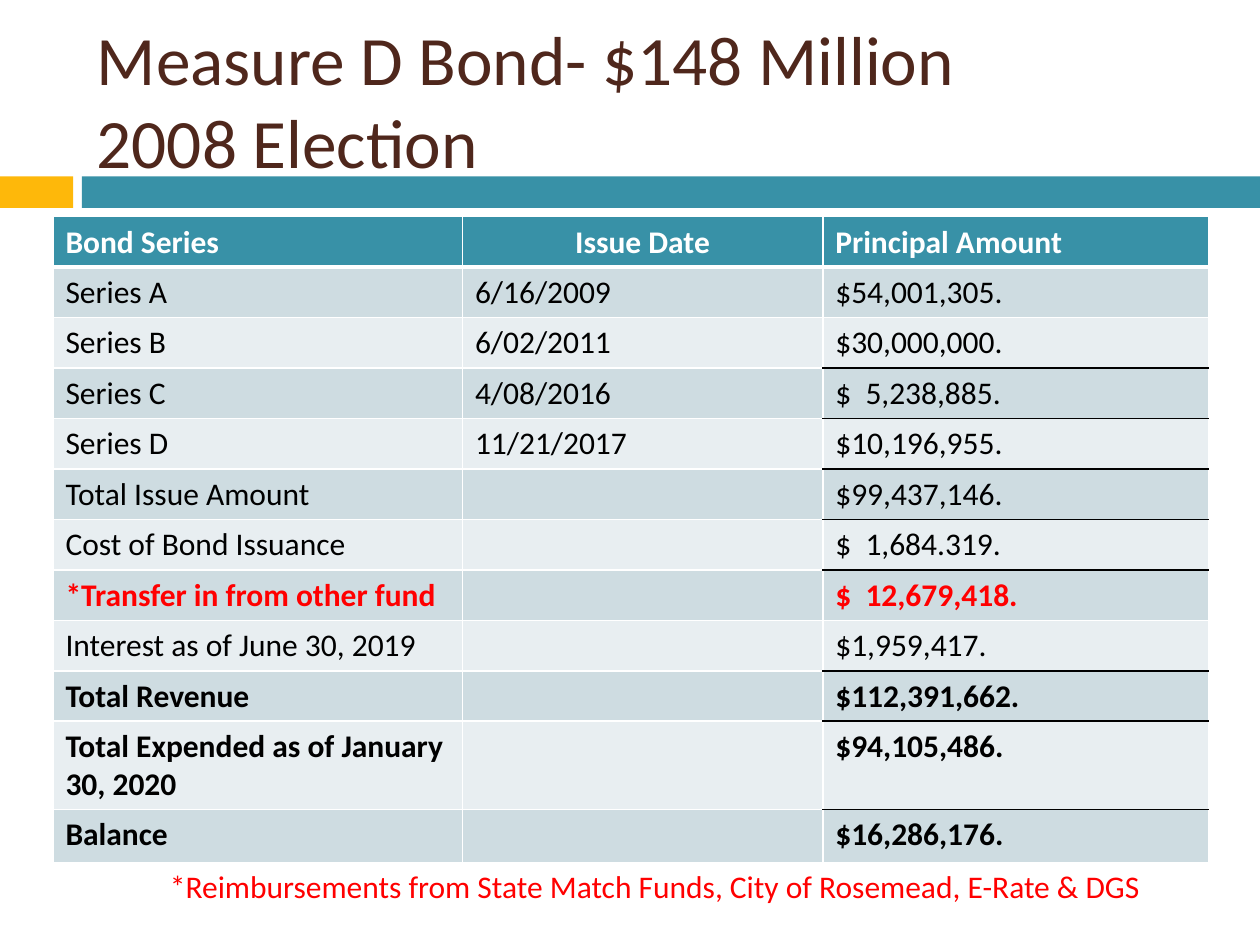
import pptx
import pptx.dml.color
import pptx.enum.shapes
import pptx.enum.text
import pptx.oxml
import pptx.oxml.ns
import pptx.util

Inches = pptx.util.Inches
Align = pptx.enum.text.PP_ALIGN
HUES = {
    "gold": "FEB80A", "teal": "3891A7", "brown": "4F271C", "dark": "CEDCE1",
    "pale": "E8EEF1", "red": "FF0000", "black": "000000", "white": "FFFFFF",
}
ROWS = [
    ("Bond Series", "Issue Date", "Principal Amount"),
    ("Series A", "6/16/2009", "$54,001,305."),
    ("Series B", "6/02/2011", "$30,000,000."),
    ("Series C", "4/08/2016", "$  5,238,885."),
    ("Series D", "11/21/2017", "$10,196,955."),
    ("Total Issue Amount", "", "$99,437,146."),
    ("Cost of Bond Issuance", "", "$  1,684.319."),
    ("*Transfer in from other fund", "", "$  12,679,418."),
    ("Interest as of June 30, 2019", "", "$1,959,417."),
    ("Total Revenue", "", "$112,391,662."),
    ("Total Expended as of January 30, 2020", "", "$94,105,486."),
    ("Balance", "", "$16,286,176."),
]
WIDTHS = [3.25, 2.86, 3.06]
HEIGHTS = [0.38] * 10 + [0.45, 0.42]
HEAD, MOVED = 0, 7
BOLD = {HEAD, MOVED, 9, 10, 11}
RULED = {2, 3, 4, 5, 6, 8, 9, 10}


class Deck:
    """Hold the style and the current slide, and draw each kind of element."""

    def __init__(self):
        self.show = pptx.Presentation()
        self.show.slide_width, self.show.slide_height = Inches(10), Inches(7.5)
        self.slide = self.show.slides.add_slide(self.show.slide_layouts[6])
        self.font = {"name": "Calibri", "size": pptx.util.Pt(18), "bold": False}

    def paint(self, fill, hue):
        fill.solid()
        fill.fore_color.rgb = pptx.dml.color.RGBColor.from_string(HUES[hue])

    def label(self, frame, text, hue, align=Align.LEFT, **extra):
        para = frame.paragraphs[0]
        para.text = text
        para.alignment = align
        for run in para.runs:
            for key, value in {**self.font, **extra}.items():
                setattr(run.font, key, value)
            self.paint(run.font.fill, hue)

    def bar(self, box, hue):
        kind = pptx.enum.shapes.MSO_SHAPE.RECTANGLE
        shape = self.slide.shapes.add_shape(kind, *map(Inches, box))
        shape.shadow.inherit = False
        shape.line.fill.background()
        self.paint(shape.fill, hue)

    def text(self, box, text, hue, form, **extra):
        frame = self.slide.shapes.add_textbox(*map(Inches, box)).text_frame
        for key, value in {"word_wrap": True, **form}.items():
            setattr(frame, key, value)
        self.label(frame, text, hue, **extra)

    def edge(self, cell, side, hue, width=1):
        space = pptx.oxml.ns.nsdecls("a")
        line = pptx.oxml.parse_xml(
            f'<a:ln{side} {space} w="{pptx.util.Pt(width)}"><a:solidFill>'
            f'<a:srgbClr val="{HUES[hue]}"/></a:solidFill></a:ln{side}>')
        cell._tc.get_or_add_tcPr().append(line)

    def cell(self, cell, row, col, text):
        last = col == len(WIDTHS) - 1
        above = "black" if last and row - 1 in RULED else "white"
        below = "black" if last and row in RULED else "white"
        self.edge(cell, "L", "white")
        self.edge(cell, "R", "white")
        self.edge(cell, "T", above, 3 if row == HEAD + 1 else 1)
        self.edge(cell, "B", below, 3 if row == HEAD else 1)
        band = "dark" if row % 2 else "pale"
        self.paint(cell.fill, "teal" if row == HEAD else band)
        hue = {HEAD: "white", MOVED: "red"}.get(row, "black")
        align = Align.CENTER if (row, col) == (HEAD, 1) else Align.LEFT
        self.label(cell.text_frame, text, hue, align, bold=row in BOLD)

    def table(self, box):
        size = len(ROWS), len(WIDTHS)
        grid = self.slide.shapes.add_table(*size, *map(Inches, box)).table
        for col, width in zip(grid.columns, WIDTHS):
            col.width = Inches(width)
        for row, height in zip(grid.rows, HEIGHTS):
            row.height = Inches(height)
        for row, texts in enumerate(ROWS):
            for col, text in enumerate(texts):
                self.cell(grid.cell(row, col), row, col, text)


def main():
    deck = Deck()
    deck.bar((0, 1.4, 0.58, 0.25), "gold")
    deck.bar((0.65, 1.4, 9.35, 0.25), "teal")
    deck.text((0.67, 0.25, 8.92, 1.08),
              "Measure D Bond- $148 Million\v2008 Election", "brown",
              {"vertical_anchor": pptx.enum.text.MSO_ANCHOR.MIDDLE},
              size=pptx.util.Pt(39.6))
    deck.table((0.42, 1.72, sum(WIDTHS), sum(HEIGHTS)))
    deck.text((1.25, 6.83, 7.92, 0.4),
              "*Reimbursements from State Match Funds, City of Rosemead, "
              "E-Rate & DGS", "red",
              {"auto_size": pptx.enum.text.MSO_AUTO_SIZE.SHAPE_TO_FIT_TEXT})
    deck.show.save("out.pptx")


if __name__ == "__main__":
    main()
